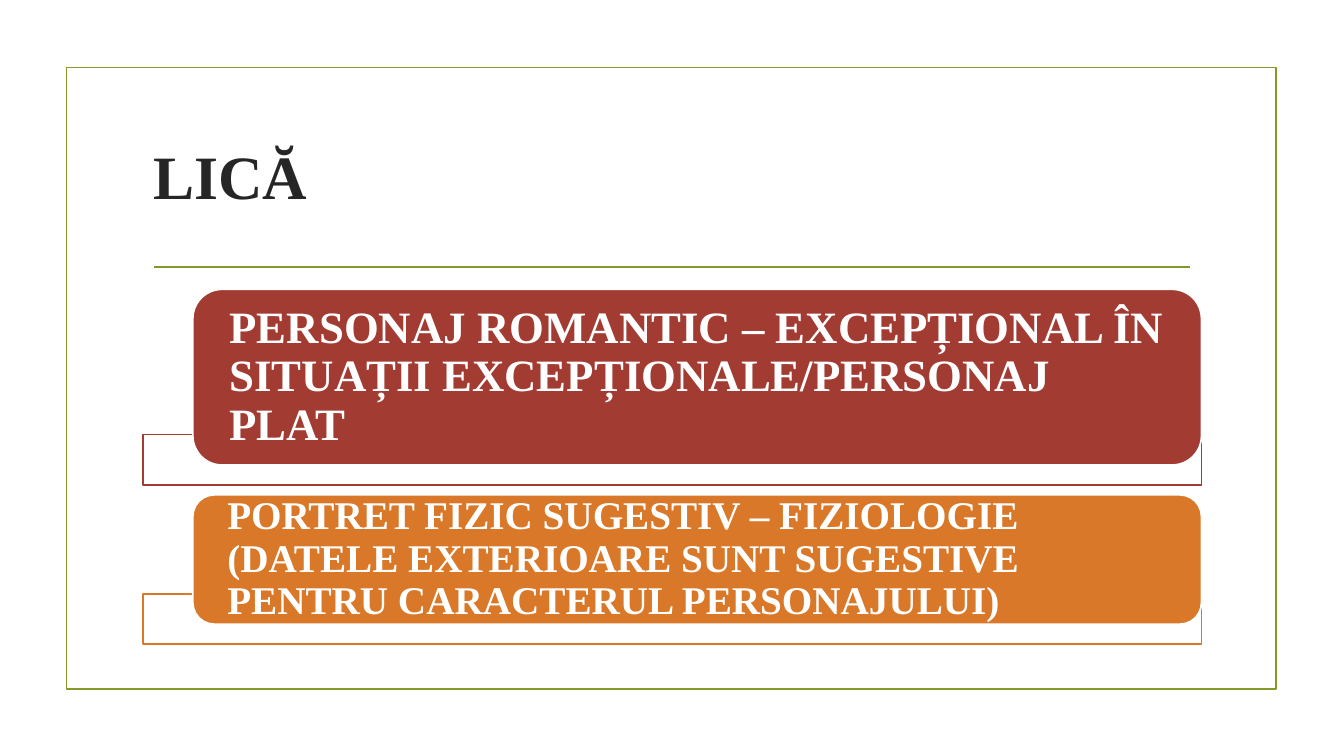
import pptx
import pptx.dml.color
import pptx.enum.shapes
import pptx.enum.text
import pptx.oxml
import pptx.oxml.ns
import pptx.util

Cm, Pt = pptx.util.Cm, pptx.util.Pt
FORM = pptx.enum.shapes.MSO_SHAPE
FONT = "Times New Roman"
COLORS = {"olive": "83992A", "red": "A23C33", "orange": "D97828",
          "ink": "262626", "white": "FFFFFF"}
TRAITS = [
    ("PERSONAJ ROMANTIC – EXCEPȚIONAL ÎN SITUAȚII EXCEPȚIONALE/PERSONAJ PLAT",
     "red", 32, 4.93),
    ("PORTRET FIZIC SUGESTIV – FIZIOLOGIE (DATELE EXTERIOARE SUNT SUGESTIVE "
     "PENTRU CARACTERUL PERSONAJULUI)", "orange", 28, 3.76),
]


def shade(name):
    return pptx.dml.color.RGBColor.from_string(COLORS[name])


def write(frame, text, size, color):
    """Fill a frame with one bold, left-aligned, vertically centred run."""
    frame.word_wrap = True
    frame.vertical_anchor = pptx.enum.text.MSO_ANCHOR.MIDDLE
    para = frame.paragraphs[0]
    para.alignment = pptx.enum.text.PP_ALIGN.LEFT
    para.line_spacing = 0.9
    run = para.add_run()
    run.text = text
    run.font.name, run.font.size, run.font.bold = FONT, Pt(size), True
    run.font.color.rgb = shade(color)


def add_box(slide, form, box, fill, line):
    shape = slide.shapes.add_shape(form, *map(Cm, box))
    shape.shadow.inherit = False
    if fill:
        shape.fill.solid()
        shape.fill.fore_color.rgb = shade(fill)
    else:
        shape.fill.background()
    shape.line.color.rgb = shade(line)
    shape.line.width = Pt(1.25)
    return shape


def add_frame(slide, box):
    add_box(slide, FORM.RECTANGLE, box, None, "olive")


def add_title(slide, box, text):
    """Place the title and the rule below it."""
    left, top, width, height = box
    title = slide.shapes.title
    title.left, title.top, title.width, title.height = map(Cm, box)
    write(title.text_frame, text, 44, "ink")
    inset, level = 0.28, top + height + 0.38
    rule = slide.shapes.add_connector(
        pptx.enum.shapes.MSO_CONNECTOR.STRAIGHT, Cm(left + inset), Cm(level),
        Cm(left + width - inset), Cm(level))
    rule.line.color.rgb = shade("olive")
    rule.line.width = Pt(1.25)
    props = rule._element.spPr
    props.append(pptx.oxml.parse_xml(
        "<a:effectLst %s/>" % pptx.oxml.ns.nsdecls("a")))


def add_trait(slide, box, text, color, size):
    """Place a rounded card over the open bar at the foot of the box."""
    left, top, width, height = box
    bar, indent, drop = 1.27, 1.25, 0.5
    add_box(slide, FORM.RECTANGLE, (left, top + height - bar, width, bar),
            "white", color)
    card = add_box(slide, FORM.ROUNDED_RECTANGLE,
                   (left + indent, top, width - indent, height - drop),
                   color, "white")
    frame = card.text_frame
    frame.margin_left = frame.margin_right = Cm(0.71)
    frame.margin_top = frame.margin_bottom = 0
    write(frame, text, size, "white")


def main():
    deck = pptx.Presentation()
    deck.slide_width, deck.slide_height = Cm(33.87), Cm(19.05)
    slide = deck.slides.add_slide(deck.slide_layouts[5])
    left, width = 3.61, 26.67
    add_frame(slide, (1.68, 1.7, 30.48, 15.67))
    add_title(slide, (left, 2.72, width, 3.63), "LICĂ")
    top, gap = 7.29, 0.25
    for text, color, size, height in TRAITS:
        add_trait(slide, (left, top, width, height), text, color, size)
        top += height + gap
    deck.save("out.pptx")


if __name__ == "__main__":
    main()
